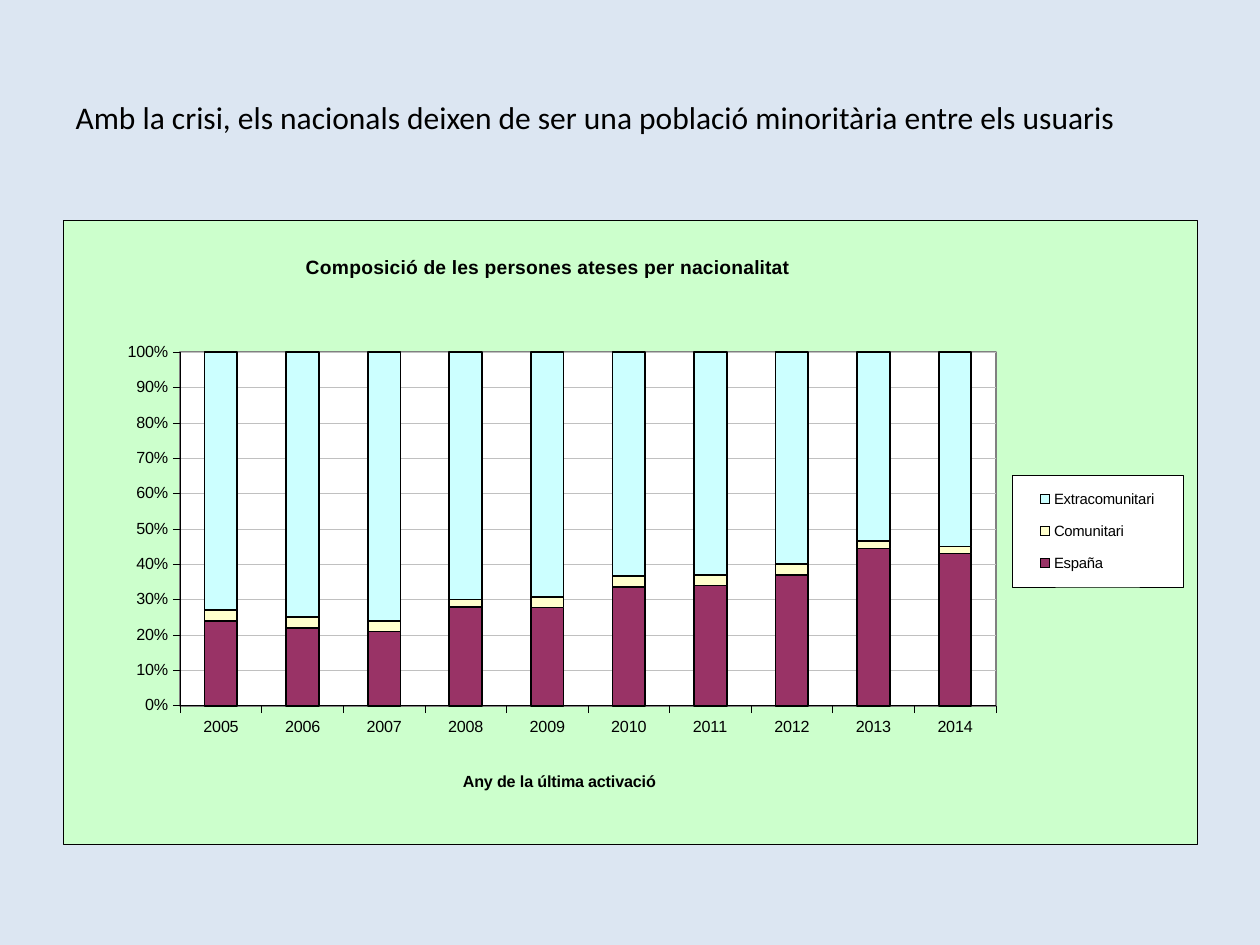
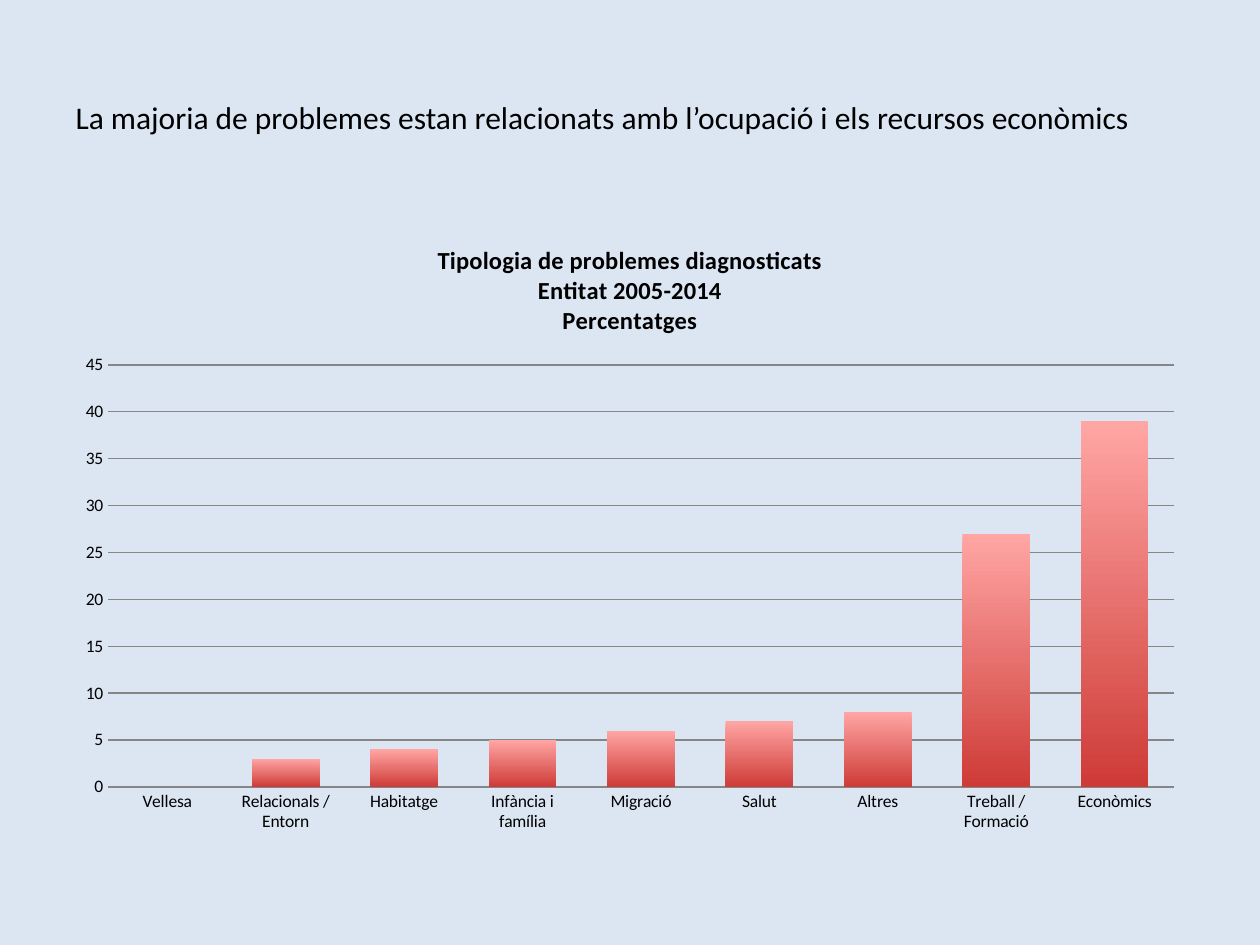
from pptx import Presentation
from pptx.chart.data import CategoryChartData as ChartData
from pptx.dml.color import RGBColor
from pptx.enum.chart import XL_CHART_TYPE as Kind, XL_LEGEND_POSITION as Side, XL_TICK_MARK as Tick
from pptx.enum.text import MSO_ANCHOR as Anchor, PP_ALIGN as Align
from pptx.oxml import parse_xml
from pptx.oxml.ns import nsdecls, qn
from pptx.util import Pt

EMU = 914400 / 126
WIDE, HIGH = 1260, 945
AREA = (63, 220, 1134, 624)
HUES = {
    "page": "DCE6F2", "ink": "000000", "white": "FFFFFF", "mint": "CCFFCC",
    "plum": "993366", "cream": "FFFFCC", "aqua": "CCFFFF", "edge": "808080",
    "pale": "C0C0C0", "grid": "868686", "rose": "FFA6A4", "red": "CE3B37",
}
YEARS = [str(year) for year in range(2005, 2015)]
ORIGINS = [
    ("España", "plum", [24, 22, 21, 28, 28, 34, 34, 37, 44, 43]),
    ("Comunitari", "cream", [3, 3, 3, 2, 3, 3, 3, 3, 2, 2]),
    ("Extracomunitari", "aqua", [73, 75, 76, 70, 70, 64, 63, 60, 53, 55]),
]
ISSUES = {
    "Vellesa": 0, "Relacionals / Entorn": 3, "Habitatge": 4,
    "Infància i família": 5, "Migració": 6, "Salut": 7, "Altres": 8,
    "Treball / Formació": 27, "Econòmics": 39,
}


def px(num):
    return round(num * EMU)


def hue(name):
    return RGBColor.from_string(HUES[name])


def style(font, face, size, bold=False):
    font.name, font.size, font.bold = face, Pt(size), bold
    font.color.rgb = hue("ink")


def write(frame, text, face="Calibri", size=18, bold=False, align=Align.LEFT):
    frame.text = text
    for para in frame.paragraphs:
        para.alignment = align
        for run in para.runs:
            style(run.font, face, size, bold)


def stroke(line, name, width):
    line.color.rgb = hue(name)
    line.width = Pt(width)


def place(node, box, index):
    old = node.find(qn("c:layout"))
    if old is not None:
        node.remove(old)
    left, top, wide, high = box
    inner = '<c:layoutTarget val="inner"/>' if node.tag == qn("c:plotArea") else ""
    modes = '<c:xMode val="edge"/><c:yMode val="edge"/>'
    spots = {"x": left - AREA[0], "y": top - AREA[1], "w": wide, "h": high}
    parts = "".join(
        f'<c:{key} val="{num / AREA[2 if key in "xw" else 3]:.4f}"/>'
        for key, num in spots.items() if num is not None)
    node.insert(index, parse_xml(
        f'<c:layout {nsdecls("c")}><c:manualLayout>{inner}{modes}{parts}'
        f'</c:manualLayout></c:layout>'))


def paint(node, fill, line, width):
    props = parse_xml(
        f'<c:spPr {nsdecls("c", "a")}><a:solidFill><a:srgbClr val="{HUES[fill]}"/></a:solidFill>'
        f'<a:ln w="{Pt(width)}"><a:solidFill><a:srgbClr val="{HUES[line]}"/></a:solidFill></a:ln>'
        f'</c:spPr>')
    text = node.find(qn("c:txPr"))
    if text is None:
        node.append(props)
    else:
        text.addprevious(props)


def find(chart, path):
    return chart.element.xpath(path)[0]


def add_page(deck, title):
    page = deck.slides.add_slide(deck.slide_layouts[5])
    head = page.shapes.title
    head.left, head.top, head.width, head.height = map(px, (63, 38, 1134, 157))
    head.text_frame.vertical_anchor = Anchor.MIDDLE
    write(head.text_frame, title)
    return page


def add_bars(page, kind, cats, rows, face, size, gap, plot):
    data = ChartData()
    data.categories = cats
    for name, nums in rows:
        data.add_series(name, nums)
    chart = page.shapes.add_chart(kind, *map(px, AREA), data).chart
    style(chart.font, face, size)
    chart.has_legend = False
    bars = chart.plots[0]
    bars.gap_width, bars.overlap = gap, 100
    bars.vary_by_categories = False
    place(find(chart, ".//c:plotArea"), plot, 0)
    return chart


def set_axes(chart, tick, line, grid, width):
    for axis in (chart.category_axis, chart.value_axis):
        axis.major_tick_mark = tick
        axis.minor_tick_mark = Tick.NONE
        stroke(axis.format.line, line, width)
    chart.category_axis.has_major_gridlines = False
    chart.value_axis.has_major_gridlines = True
    stroke(chart.value_axis.major_gridlines.format.line, grid, width)


def add_key(chart, box):
    chart.has_legend = True
    key = chart.legend
    key.position = Side.RIGHT
    key.include_in_layout = False
    style(key.font, "Arial", 8.5)
    node = find(chart, ".//c:legend")
    place(node, box, 1)
    paint(node, "white", "ink", 0.25)


def show_origins(page):
    rows = [(name, nums) for name, _, nums in ORIGINS]
    chart = add_bars(page, Kind.COLUMN_STACKED_100, YEARS, rows,
                     "Arial", 9.2, 150, (180, 352, 816, 354))
    set_axes(chart, Tick.OUTSIDE, "ink", "pale", 0.25)
    labels = chart.value_axis.tick_labels
    labels.number_format, labels.number_format_is_linked = "0%", False
    for row, (_, name, _) in zip(chart.plots[0].series, ORIGINS):
        row.format.fill.solid()
        row.format.fill.fore_color.rgb = hue(name)
        stroke(row.format.line, "ink", 1)
    write(chart.chart_title.text_frame, "Composició de les persones ateses per nacionalitat",
          face="Arial", size=11, bold=True, align=Align.CENTER)
    write(chart.category_axis.axis_title.text_frame, "Any de la última activació",
          face="Arial", size=9.2, bold=True, align=Align.CENTER)
    place(find(chart, "./c:chart/c:title"), (302, 250, None, None), 1)
    place(find(chart, ".//c:catAx/c:title"), (460, 769, None, None), 1)
    add_key(chart, (1012, 475, 171, 112))
    paint(find(chart, ".//c:plotArea"), "white", "edge", 1)
    paint(chart.element, "mint", "ink", 0.25)


def show_issues(page):
    chart = add_bars(page, Kind.COLUMN_STACKED, list(ISSUES), [("Series 1", list(ISSUES.values()))],
                     "Calibri", 10, 75, (108, 365, 1066, 422))
    set_axes(chart, Tick.NONE, "grid", "grid", 0.75)
    axis = chart.value_axis
    axis.format.line.fill.background()
    axis.minimum_scale, axis.maximum_scale, axis.major_unit = 0, 45, 5
    fill = chart.plots[0].series[0].format.fill
    fill.gradient()
    fill.gradient_angle = 270
    for stop, name in zip(fill.gradient_stops, ("rose", "red")):
        stop.color.rgb = hue(name)
    write(chart.chart_title.text_frame,
          "Tipologia de problemes diagnosticats\nEntitat 2005-2014\nPercentatges",
          size=14, bold=True, align=Align.CENTER)


def main():
    deck = Presentation()
    deck.slide_width, deck.slide_height = px(WIDE), px(HIGH)
    back = deck.slide_master.background.fill
    back.solid()
    back.fore_color.rgb = hue("page")
    show_origins(add_page(
        deck, "Amb la crisi, els nacionals deixen de ser una població minoritària entre els usuaris"))
    show_issues(add_page(
        deck, "La majoria de problemes estan relacionats amb l’ocupació i els recursos econòmics"))
    deck.save("out.pptx")


if __name__ == "__main__":
    main()
